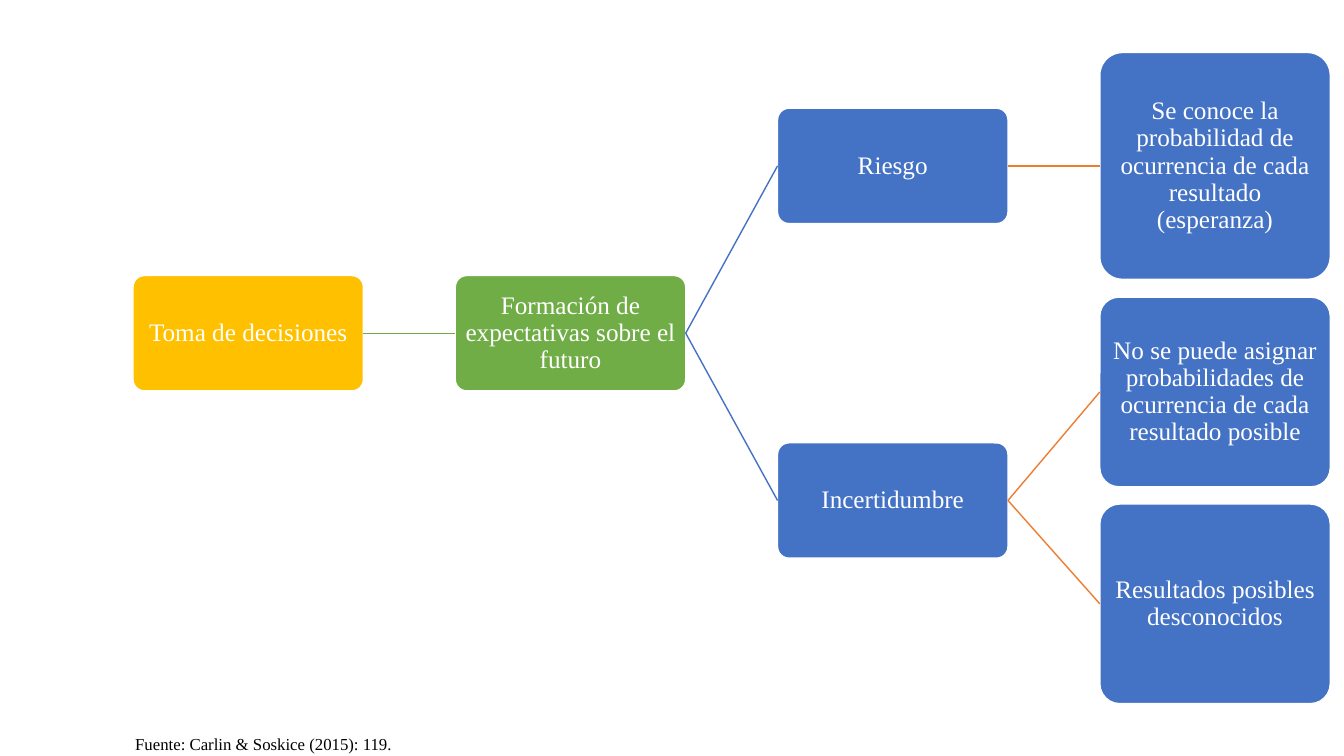
"""Build a left-to-right decision tree on risk and uncertainty."""
from pptx import Presentation
from pptx.dml.color import RGBColor
from pptx.enum.shapes import MSO_CONNECTOR as Line, MSO_SHAPE as Preset
from pptx.enum.text import MSO_ANCHOR as Anchor, PP_ALIGN as Align
from pptx.oxml.ns import qn
from pptx.util import Pt

FONT = "Times New Roman"
WHITE, BLACK = "FFFFFF", "000000"
GOLD, GREEN, BLUE, ORANGE = "FFC000", "70AD47", "4472C4", "ED7D31"
SOURCE = "Fuente: Carlin & Soskice (2015): 119."

# key: (text, level, centre y, height, fill)
IDEAS = {
    "decision": ("Toma de decisiones", 0, 238, 82.4, GOLD),
    "expectations": ("Formación de expectativas sobre el futuro", 1, 238, 82.4, GREEN),
    "risk": ("Riesgo", 2, 118.5, 82.4, BLUE),
    "known": ("Se conoce la probabilidad de ocurrencia de cada resultado (esperanza)",
              3, 118.5, 162, BLUE),
    "uncertainty": ("Incertidumbre", 2, 357.5, 82.4, BLUE),
    "unassignable": ("No se puede asignar probabilidades de ocurrencia de cada "
                     "resultado posible", 3, 280, 135.4, BLUE),
    "unknown": ("Resultados posibles desconocidos", 3, 431.3, 142.6, BLUE),
}
BRANCHES = [
    ("decision", "expectations", GREEN),
    ("expectations", "risk", BLUE),
    ("expectations", "uncertainty", BLUE),
    ("risk", "known", ORANGE),
    ("uncertainty", "unassignable", ORANGE),
    ("uncertainty", "unknown", ORANGE),
]
LEFT, STEP, WIDTH = 95, 230.2, 164.6
LEFT_SITE, RIGHT_SITE = 1, 3


def color(value):
    return RGBColor.from_string(value)


def write(frame, text, size, ink):
    frame.text = text
    paragraph = frame.paragraphs[0]
    paragraph.font.name = FONT
    paragraph.font.size = Pt(size)
    paragraph.font.color.rgb = color(ink)
    return paragraph


def add_idea(slide, text, level, middle, height, fill):
    idea = slide.shapes.add_shape(
        Preset.ROUNDED_RECTANGLE, Pt(LEFT + level * STEP), Pt(middle - height / 2),
        Pt(WIDTH), Pt(height))
    idea.adjustments[0] = 0.1
    idea.shadow.inherit = False
    idea.fill.solid()
    idea.fill.fore_color.rgb = color(fill)
    idea.line.color.rgb = color(WHITE)
    idea.line.width = Pt(1)
    frame = idea.text_frame
    frame.word_wrap = True
    frame.vertical_anchor = Anchor.MIDDLE
    frame.margin_left = frame.margin_right = Pt(0.9)
    frame.margin_top = frame.margin_bottom = Pt(0.9)
    paragraph = write(frame, text, 18, WHITE)
    paragraph.alignment = Align.CENTER
    paragraph.line_spacing = 0.9
    return idea


def add_branch(slide, parent, child, ink):
    branch = slide.shapes.add_connector(Line.STRAIGHT, 0, 0, 0, 0)
    branch.begin_connect(parent, RIGHT_SITE)
    branch.end_connect(child, LEFT_SITE)
    branch.line.color.rgb = color(ink)
    branch.line.width = Pt(1)
    properties = branch._element.spPr
    properties.append(properties.makeelement(qn("a:effectLst"), {}))


deck = Presentation()
deck.slide_width, deck.slide_height = Pt(960), Pt(540)
slide = deck.slides.add_slide(deck.slide_layouts[6])

ideas = {key: add_idea(slide, *idea) for key, idea in IDEAS.items()}
for parent, child, ink in BRANCHES:
    add_branch(slide, ideas[parent], ideas[child], ink)

source = slide.shapes.add_textbox(Pt(89.5), Pt(520.5), Pt(200), Pt(21.6))
source.text_frame.word_wrap = False
write(source.text_frame, SOURCE, 12, BLACK)

deck.save("out.pptx")
